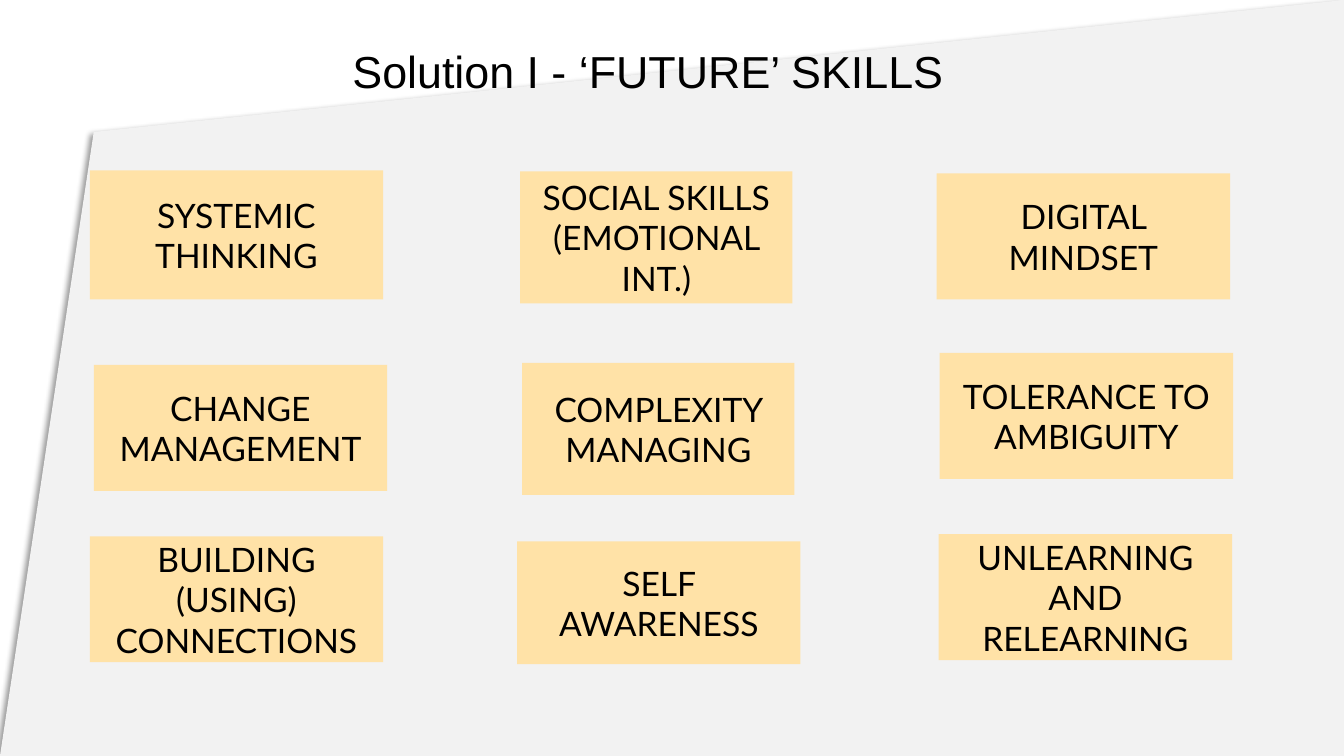
from dataclasses import dataclass

from lxml import etree
from pptx import Presentation
from pptx.dml.color import RGBColor
from pptx.enum.shapes import MSO_SHAPE
from pptx.enum.text import MSO_ANCHOR, MSO_AUTO_SIZE, PP_ALIGN
from pptx.oxml import parse_xml
from pptx.oxml.ns import nsdecls
from pptx.util import Inches, Pt

RECTANGLE = MSO_SHAPE.RECTANGLE
CENTER = PP_ALIGN.CENTER
MIDDLE = MSO_ANCHOR.MIDDLE
NO_AUTOFIT = MSO_AUTO_SIZE.NONE
TITLE_ONLY = 5


@dataclass(frozen=True)
class Theme:
    ink: RGBColor = RGBColor(0x00, 0x00, 0x00)
    panel: RGBColor = RGBColor(0xF2, 0xF2, 0xF2)
    card: RGBColor = RGBColor(0xFF, 0xE2, 0xA7)
    title_font: str = "Arial"
    card_font: str = "Lato"
    title_size: int = 32
    card_size: int = 24


THEME = Theme()
SLIDE_BOX = (0, 0, 13.33, 7.5)
TITLE_BOX = (3.21, 0.38, 6.44, 0.64)

# Each card: box (left, top, width, height) and its paragraphs
SKILLS = [
    ((0.89, 1.69, 2.91, 1.28), ["SYSTEMIC THINKING"]),
    ((5.16, 1.70, 2.70, 1.31), ["SOCIAL SKILLS", "(EMOTIONAL INT.)"]),
    ((9.29, 1.72, 2.91, 1.25), ["DIGITAL MINDSET"]),
    ((0.93, 3.62, 2.91, 1.25), ["CHANGE MANAGEMENT"]),
    ((5.18, 3.60, 2.70, 1.31), ["COMPLEXITY MANAGING"]),
    ((9.32, 3.50, 2.91, 1.25), ["TOLERANCE TO AMBIGUITY"]),
    ((0.89, 5.32, 2.91, 1.25), ["BUILDING (USING)", "CONNECTIONS"]),
    ((5.13, 5.37, 2.81, 1.22), ["SELF AWARENESS"]),
    ((9.31, 5.30, 2.91, 1.25), ["UNLEARNING AND RELEARNING"]),
]


def write_text(tf, lines, font, size):
    """Fill a frame with centred paragraphs, one per line."""
    tf.word_wrap = True
    tf.auto_size = NO_AUTOFIT
    tf.vertical_anchor = MIDDLE
    for i, line in enumerate(lines):
        p = tf.paragraphs[0] if i == 0 else tf.add_paragraph()
        p.alignment = CENTER
        r = p.add_run()
        r.text = line
        r.font.name = font
        r.font.size = Pt(size)
        r.font.color.rgb = THEME.ink


def add_shadow(sp, blur, distance, angle, opacity):
    effects = parse_xml(f"<a:effectLst {nsdecls('a')}/>")
    tag = "{%s}" % effects.nsmap["a"]
    shadow = etree.SubElement(
        effects, tag + "outerShdw", blurRad=str(Pt(blur)), dist=str(Pt(distance)),
        dir=str(angle * 60000), algn="tr", rotWithShape="0")
    color = etree.SubElement(shadow, tag + "srgbClr", val=str(THEME.ink))
    etree.SubElement(color, tag + "alpha", val=str(opacity * 1000))
    sp.element.spPr.append(effects)


def add_slanted_panel(slide, box):
    left, top, width, height = box
    right, bottom = left + width, top + height
    corners = [(left + 0.93, top + 1.31), (right, top), (right, bottom), (left, bottom)]
    points = [(Inches(x), Inches(y)) for x, y in corners]
    builder = slide.shapes.build_freeform(*points[0])
    builder.add_line_segments(points[1:], close=True)
    sp = builder.convert_to_shape()
    sp.fill.solid()
    sp.fill.fore_color.rgb = THEME.panel
    sp.line.fill.background()
    add_shadow(sp, blur=4, distance=3, angle=135, opacity=40)
    slide.shapes.element.insert(2, sp.element)  # behind the title


def add_title(slide, box, text):
    sp = slide.shapes.title
    sp.left, sp.top, sp.width, sp.height = map(Inches, box)
    write_text(sp.text_frame, [text], THEME.title_font, THEME.title_size)


def add_skill_card(slide, box, lines):
    sp = slide.shapes.add_shape(RECTANGLE, *map(Inches, box))
    sp.shadow.inherit = False
    sp.fill.solid()
    sp.fill.fore_color.rgb = THEME.card
    sp.line.fill.background()
    write_text(sp.text_frame, lines, THEME.card_font, THEME.card_size)


def build_skills_slide(prs):
    slide = prs.slides.add_slide(prs.slide_layouts[TITLE_ONLY])
    add_slanted_panel(slide, SLIDE_BOX)
    add_title(slide, TITLE_BOX, "Solution I - ‘FUTURE’ SKILLS")
    for box, lines in SKILLS:
        add_skill_card(slide, box, lines)


def main():
    prs = Presentation()
    prs.slide_width, prs.slide_height = map(Inches, SLIDE_BOX[2:])
    build_skills_slide(prs)
    prs.save("out.pptx")


if __name__ == "__main__":
    main()
